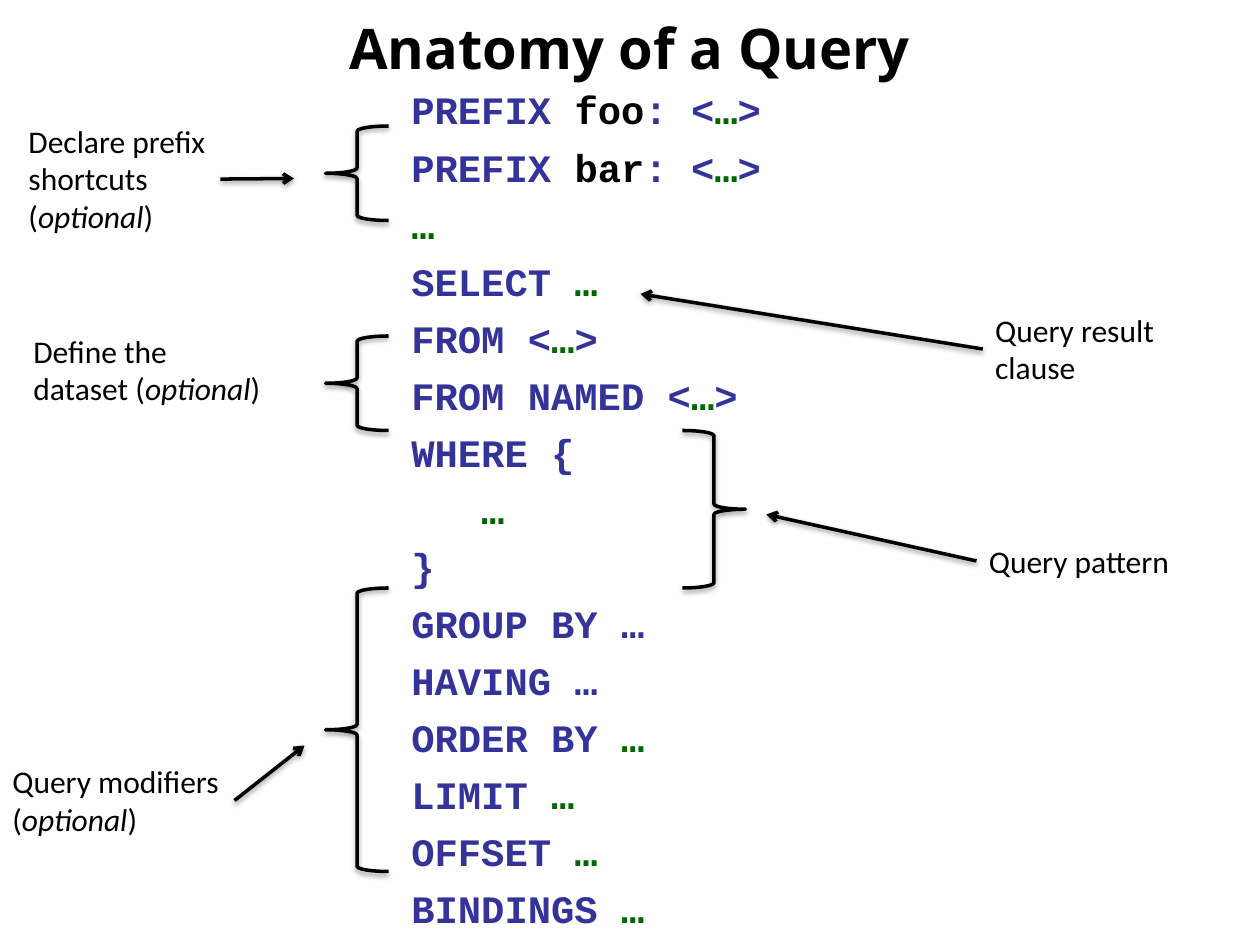
"""Build the slide that labels the parts of a query."""
from lxml.etree import SubElement
from pptx import Presentation
from pptx.dml.color import RGBColor
from pptx.enum.shapes import MSO_CONNECTOR as CONNECTOR, MSO_SHAPE as SHAPE
from pptx.enum.text import MSO_ANCHOR as ANCHOR, MSO_AUTO_SIZE as AUTO_SIZE, PP_ALIGN as ALIGN
from pptx.oxml.ns import qn
from pptx.util import Pt

BLACK = RGBColor(0x00, 0x00, 0x00)
KEYWORD = RGBColor(0x33, 0x33, 0x99)
ELLIPSIS = RGBColor(0x00, 0x66, 0x00)


def add_run(paragraph, text, font, size, color=BLACK, bold=False, italic=False):
    run = paragraph.add_run()
    run.text = text
    run.font.name = font
    run.font.size = Pt(size)
    run.font.color.rgb = color
    run.font.bold = bold
    run.font.italic = italic


def draw_outline(drawn):
    drawn.line.color.rgb = BLACK
    drawn.line.width = Pt(2)
    properties = drawn._element.spPr
    effects = SubElement(properties, qn("a:effectLst"))
    shadow = SubElement(effects, qn("a:outerShdw"), blurRad=str(Pt(3.1)), dist=str(Pt(1.6)),
                        dir="5400000", rotWithShape="0")
    tint = SubElement(shadow, qn("a:srgbClr"), val=str(BLACK))
    SubElement(tint, qn("a:alpha"), val="38000")


deck = Presentation()
deck.slide_width, deck.slide_height = Pt(720), Pt(540)
slide = deck.slides.add_slide(deck.slide_layouts[6])
shapes = slide.shapes

title = shapes.add_textbox(Pt(36), Pt(-18), Pt(648), Pt(90)).text_frame
title.word_wrap = True
title.vertical_anchor = ANCHOR.MIDDLE
title.paragraphs[0].alignment = ALIGN.CENTER
add_run(title.paragraphs[0], "Anatomy of a Query", "Open Sans", 32, bold=True)

query_lines = [
    [("PREFIX ", KEYWORD), ("foo", BLACK), (": <", KEYWORD), ("…", ELLIPSIS), (">", KEYWORD)],
    [("PREFIX ", KEYWORD), ("bar", BLACK), (": <", KEYWORD), ("…", ELLIPSIS), (">", KEYWORD)],
    [("…", ELLIPSIS)],
    [("SELECT", KEYWORD), (" …", ELLIPSIS)],
    [("FROM <", KEYWORD), ("…", ELLIPSIS), (">", KEYWORD)],
    [("FROM NAMED <", KEYWORD), ("…", ELLIPSIS), (">", KEYWORD)],
    [("WHERE {", KEYWORD)],
    [("   …", ELLIPSIS)],
    [("}", KEYWORD)],
    [("GROUP BY …", KEYWORD)],
    [("HAVING …", KEYWORD)],
    [("ORDER BY", KEYWORD), (" …", ELLIPSIS)],
    [("LIMIT", KEYWORD), (" …", ELLIPSIS)],
    [("OFFSET", KEYWORD), (" …", ELLIPSIS)],
    [("BINDINGS", KEYWORD), (" …", ELLIPSIS)],
]
query = shapes.add_textbox(Pt(228), Pt(72), Pt(252), Pt(456)).text_frame
query.word_wrap = True
query.vertical_anchor = ANCHOR.MIDDLE
query.margin_top, query.margin_bottom = Pt(0), Pt(18.6)
for index, query_line in enumerate(query_lines):
    paragraph = query.paragraphs[0] if index == 0 else query.add_paragraph()
    if index:
        paragraph.space_before = Pt(5.95)
    for text, color in query_line:
        add_run(paragraph, text, "Courier New", 22.2, color, bold=True)

LEFT_SIDE, RIGHT_SIDE = 1, 3
annotations = [
    ((9.2, 66, 116.8, 72.7), ["Declare prefix", "shortcuts", "(*optional*)"],
     RIGHT_SIDE, (126, 102.3), (168, 102)),
    ((561.6, 174, 110.4, 50.9), ["Query result", "clause"],
     LEFT_SIDE, (561.6, 199.5), (366, 168)),
    ((558, 306, 118.7, 29.1), ["Query pattern"],
     LEFT_SIDE, (558, 320.5), (438, 294)),
    ((0, 432, 134, 50.9), ["Query modifiers", "(*optional*)"],
     RIGHT_SIDE, (134, 457.5), (174, 426)),
    ((12, 186, 146, 50.9), ["Define the", "dataset (*optional*)"],
     None, None, None),
]
for box, lines, side, start, end in annotations:
    label = shapes.add_textbox(*map(Pt, box))
    frame = label.text_frame
    frame.word_wrap = lines[0] == "Query modifiers"
    frame.auto_size = AUTO_SIZE.SHAPE_TO_FIT_TEXT
    for index, line in enumerate(lines):
        paragraph = frame.paragraphs[0] if index == 0 else frame.add_paragraph()
        for part, text in enumerate(line.split("*")):
            add_run(paragraph, text, "Calibri", 18, italic=part == 1)
    if side is not None:
        arrow = shapes.add_connector(CONNECTOR.STRAIGHT, *map(Pt, start + end))
        arrow.begin_connect(label, side)
        draw_outline(arrow)
        SubElement(arrow.line._get_or_add_ln(), qn("a:tailEnd"), type="arrow")

braces = [(390, 246, 90, 0), (186, 336, 162, 180), (186, 72, 54, 180), (186, 192, 54, 180)]
for left, top, height, rotation in braces:
    brace = shapes.add_shape(SHAPE.RIGHT_BRACE, Pt(left), Pt(top), Pt(36), Pt(height))
    brace.rotation = rotation
    brace.fill.background()
    draw_outline(brace)

deck.save("out.pptx")
